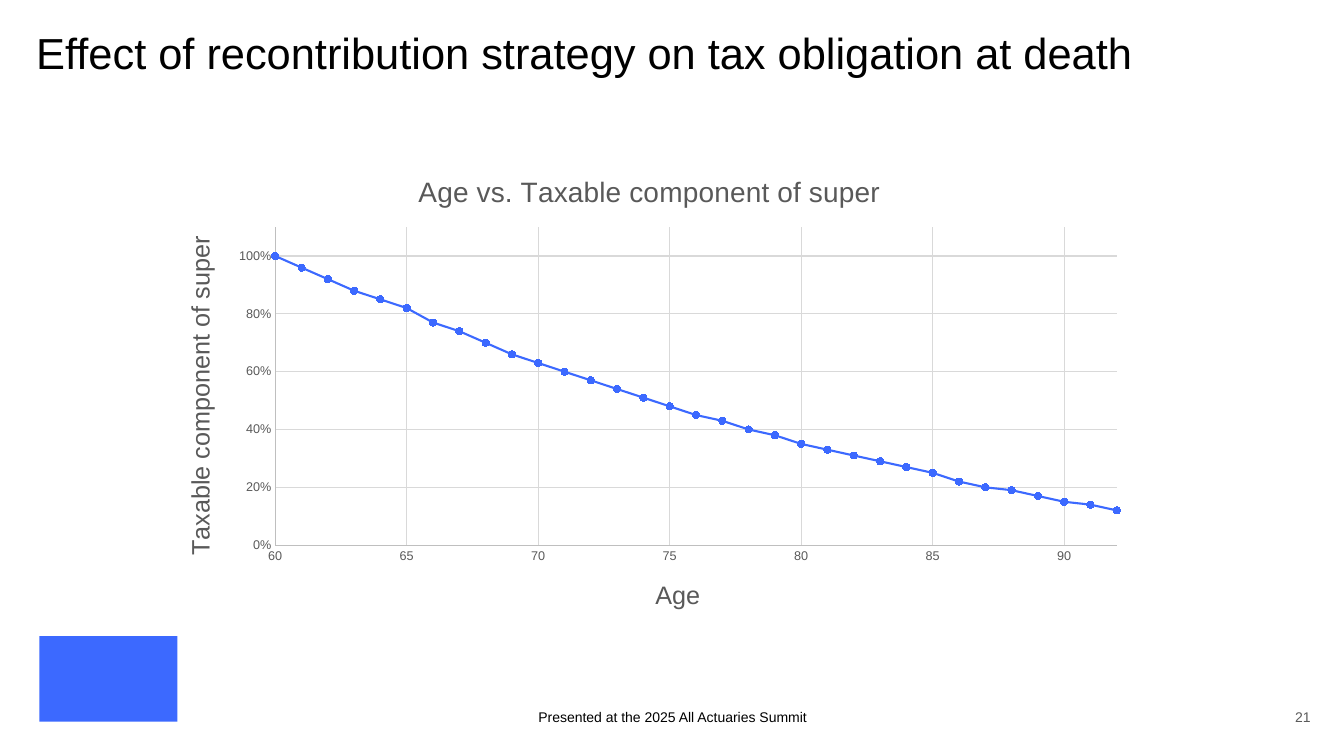
from lxml import etree
from pptx import Presentation, util as u
from pptx.chart.data import XyChartData
from pptx.dml.color import RGBColor
from pptx.enum import chart as ch, shapes, text
from pptx.oxml.ns import qn

WIDE, HIGH = 13.33, 7.5
FACE = "Arial"
HUES = {"ink": "000000", "blue": "3C69FF", "grey": "595959",
        "page": "5B5B5B", "axis": "BFBFBF", "grid": "D9D9D9"}
START, STOP = 60, 92
RATES = [1, 0.96, 0.92, 0.88, 0.85, 0.82, 0.77, 0.74, 0.7, 0.66, 0.63,
         0.6, 0.57, 0.54, 0.51, 0.48, 0.45, 0.43, 0.4, 0.38, 0.35, 0.33,
         0.31, 0.29, 0.27, 0.25, 0.22, 0.2, 0.19, 0.17, 0.15, 0.14, 0.12]


def hue(name):
    return RGBColor.from_string(HUES[name])


def place(x, y, w, h):
    return [u.Inches(round(part * side / 100, 2)) for part, side in
            zip((x, y, w, h), (WIDE, HIGH, WIDE, HIGH))]


def apply(item, **form):
    for key, val in form.items():
        setattr(item, key, val)


def style(font, size, color):
    apply(font, name=FACE, size=u.Pt(size), bold=False)
    font.color.rgb = hue(color)


def stroke(line, color, width):
    line.color.rgb = hue(color)
    line.width = u.Pt(width)


def label(slide, words, spot, size, color, align, anchor, space=1.0):
    frame = slide.shapes.add_textbox(*place(*spot)).text_frame
    apply(frame, word_wrap=True, vertical_anchor=anchor, margin_left=0,
          margin_right=0, margin_top=0, margin_bottom=0)
    para = frame.paragraphs[0]
    apply(para, text=words, alignment=align, line_spacing=space)
    style(para.font, size, color)


def mark(slide, spot):
    block = slide.shapes.add_shape(shapes.MSO_SHAPE.RECTANGLE, *place(*spot))
    block.shadow.inherit = False
    block.fill.solid()
    block.fill.fore_color.rgb = hue("blue")
    block.line.fill.background()


def pin(layout, x, y, **more):
    for old in list(layout):
        layout.remove(old)
    manual = etree.SubElement(layout, qn("c:manualLayout"))
    if more:
        etree.SubElement(manual, qn("c:layoutTarget")).set("val", "inner")
    for key in ("xMode", "yMode"):
        etree.SubElement(manual, qn("c:" + key)).set("val", "edge")
    for key, val in dict(x=x, y=y, **more).items():
        node = etree.SubElement(manual, qn("c:" + key))
        node.set("val", str(round(val / 100, 4)))


def head(title, words, size, x, y):
    frame = title.text_frame
    frame.text = words
    style(frame.paragraphs[0].runs[0].font, size, "grey")
    node = title._element
    layout = node.find(qn("c:layout"))
    if layout is None:
        layout = etree.Element(qn("c:layout"))
        node.find(qn("c:tx")).addnext(layout)
    pin(layout, x, y)
    return frame


def scale(axis, low, top, step, form):
    apply(axis, minimum_scale=low, maximum_scale=top, major_unit=step,
          has_major_gridlines=True, has_title=True,
          major_tick_mark=ch.XL_TICK_MARK.NONE,
          minor_tick_mark=ch.XL_TICK_MARK.NONE)
    apply(axis.tick_labels, number_format=form, number_format_is_linked=False)
    style(axis.tick_labels.font, 9, "grey")
    stroke(axis.format.line, "axis", 0.75)
    stroke(axis.major_gridlines.format.line, "grid", 0.75)


def curve(slide, spot):
    data = XyChartData()
    points = data.add_series("Series 1")
    for age, rate in zip(range(START, STOP + 1), RATES):
        points.add_data_point(age, rate)
    chart = slide.shapes.add_chart(
        ch.XL_CHART_TYPE.XY_SCATTER_LINES, *place(*spot), data).chart
    apply(chart, has_legend=False, has_title=True)
    style(chart.font, 10, "ink")
    chart.plots[0].vary_by_categories = False
    across, up = chart.category_axis, chart.value_axis
    scale(across, START, STOP, 5, "General")
    scale(up, 0, 1.1, 0.2, "0%")
    head(chart.chart_title, "Age vs. Taxable component of super", 20, 25.7, 3.1)
    head(across.axis_title, "Age", 18, 50.1, 87.5)
    side = head(up.axis_title, "Taxable component of super", 18, 1.6, 16.2)
    body = side._txBody.find(qn("a:bodyPr"))
    body.set("rot", "-5400000")
    body.set("vert", "horz")
    area = chart._chartSpace.chart.plotArea
    layout = area.find(qn("c:layout"))
    if layout is None:
        layout = etree.Element(qn("c:layout"))
        area.insert(0, layout)
    pin(layout, 11.5, 15.2, w=86.5, h=66.3)
    line = chart.plots[0].series[0]
    line.smooth = False
    stroke(line.format.line, "blue", 1.5)
    apply(line.marker, style=ch.XL_MARKER_STYLE.CIRCLE, size=5)
    line.marker.format.fill.solid()
    line.marker.format.fill.fore_color.rgb = hue("blue")
    stroke(line.marker.format.line, "blue", 0.75)


def main():
    deck = Presentation()
    apply(deck, slide_width=u.Inches(WIDE), slide_height=u.Inches(HIGH))
    slide = deck.slides.add_slide(deck.slide_layouts[6])
    side, edge = text.PP_ALIGN, text.MSO_ANCHOR
    mark(slide, (2.93, 84.13, 10.28, 11.33))
    label(slide, "Effect of recontribution strategy on tax obligation at death",
          (2.7, 4.27, 88.22, 18), 31, "ink", side.LEFT, edge.TOP, 0.9)
    label(slide, "21", (94.07, 93.4, 3.45, 2.67),
          10, "page", side.RIGHT, edge.BOTTOM)
    label(slide, "Presented at the 2025 All Actuaries Summit",
          (33.16, 93.4, 33.76, 2.67), 10, "ink", side.CENTER, edge.BOTTOM)
    curve(slide, (12.15, 20.4, 72.39, 63.47))
    deck.save("out.pptx")


if __name__ == "__main__":
    main()
